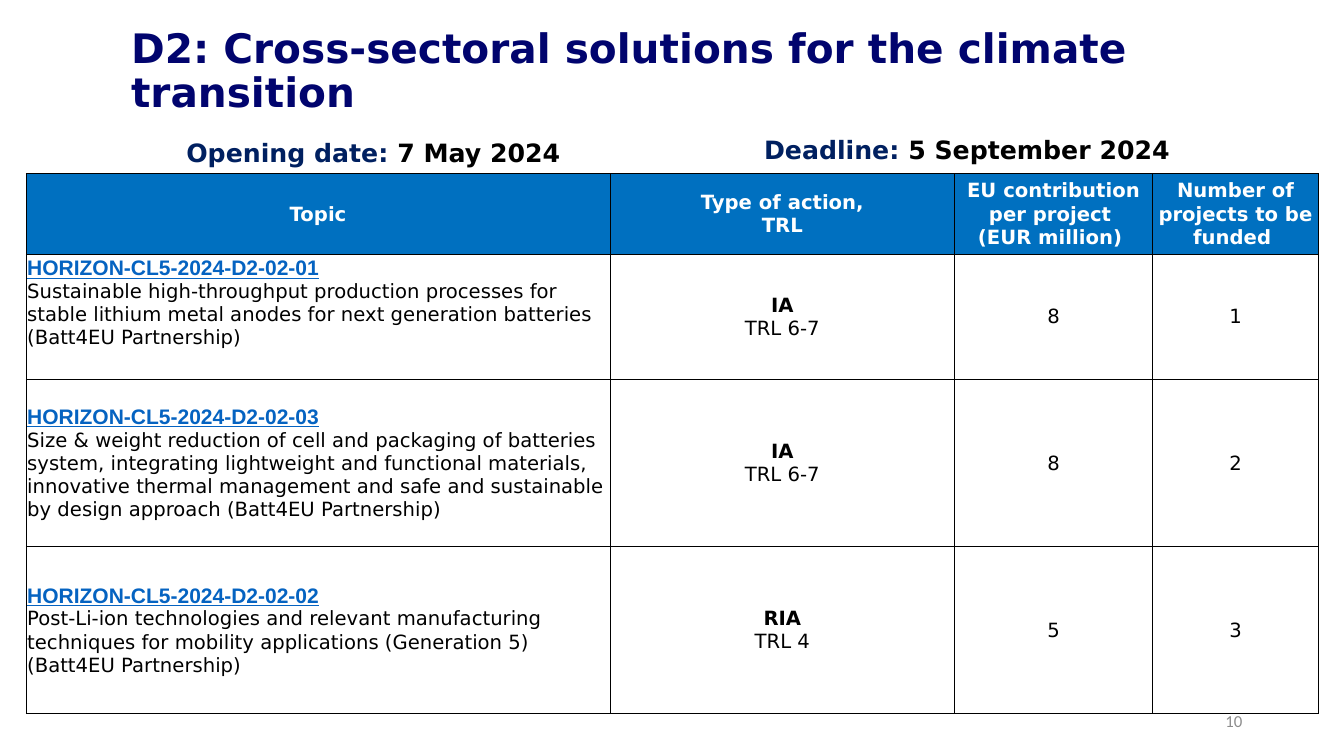
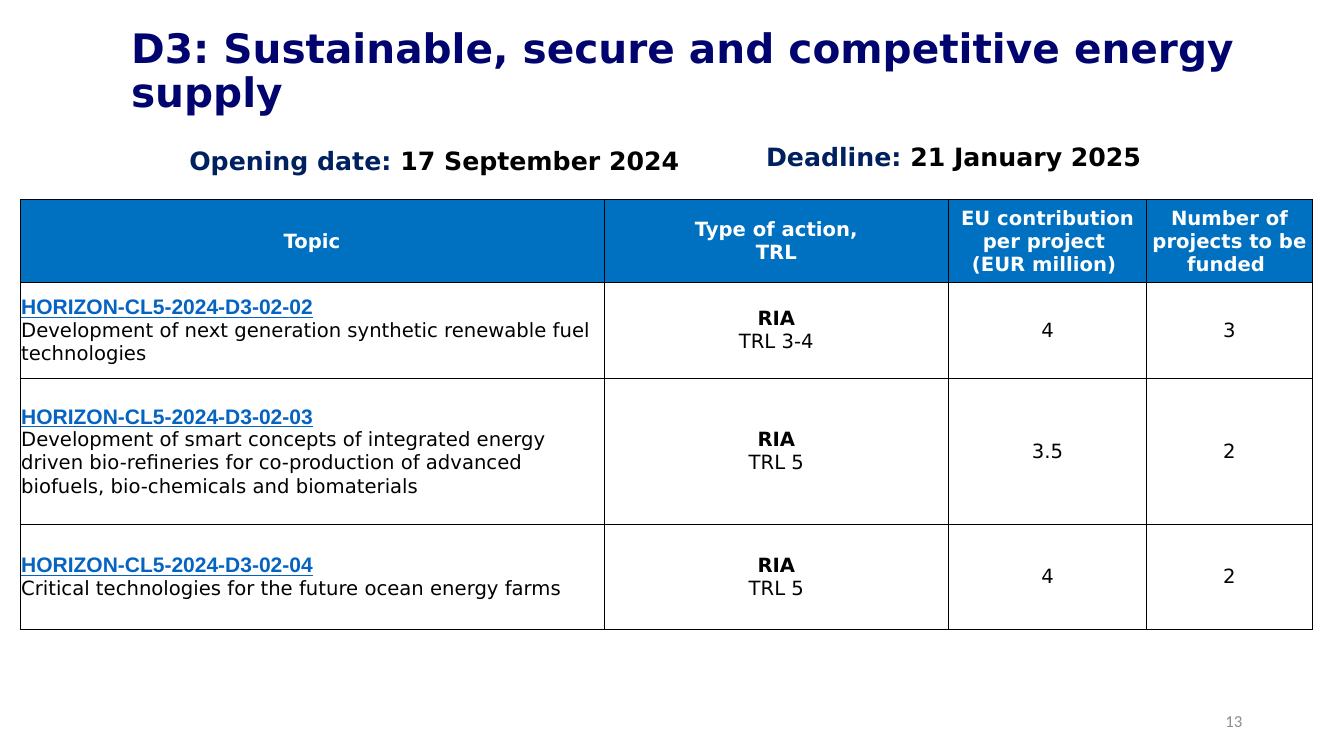
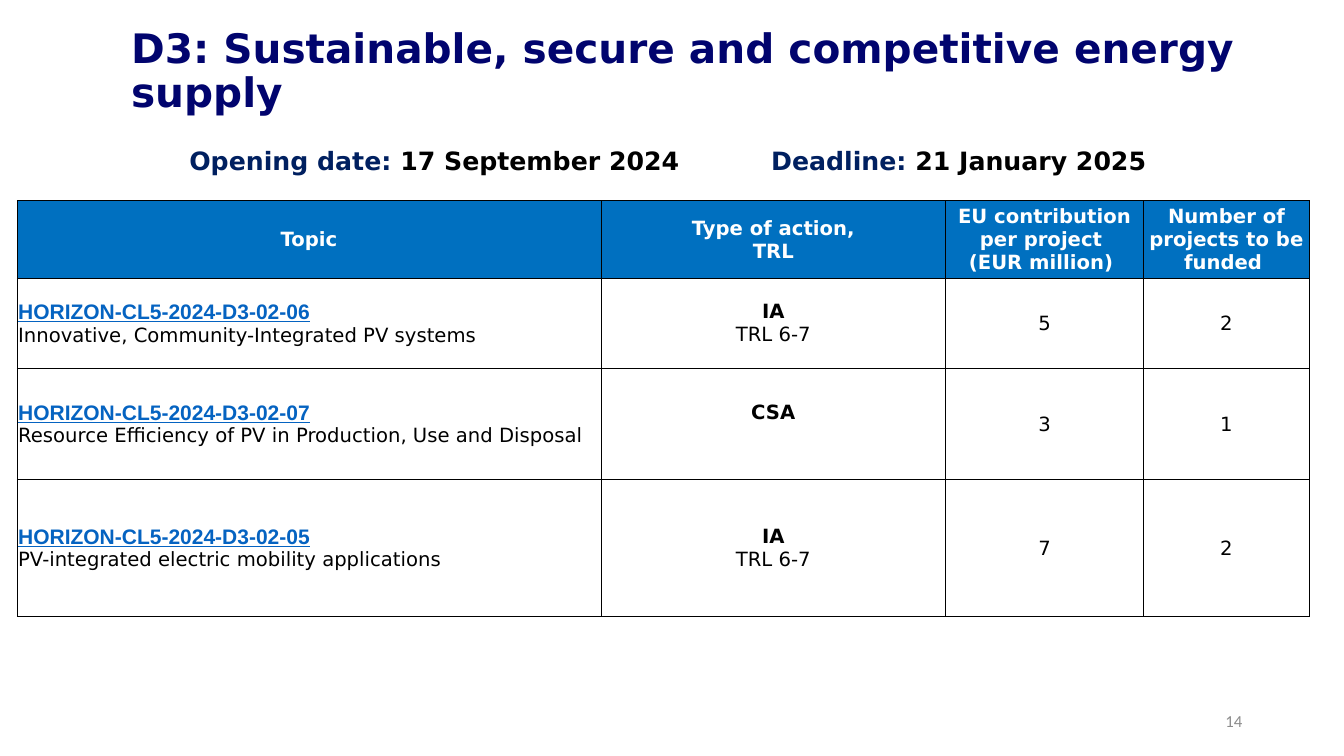
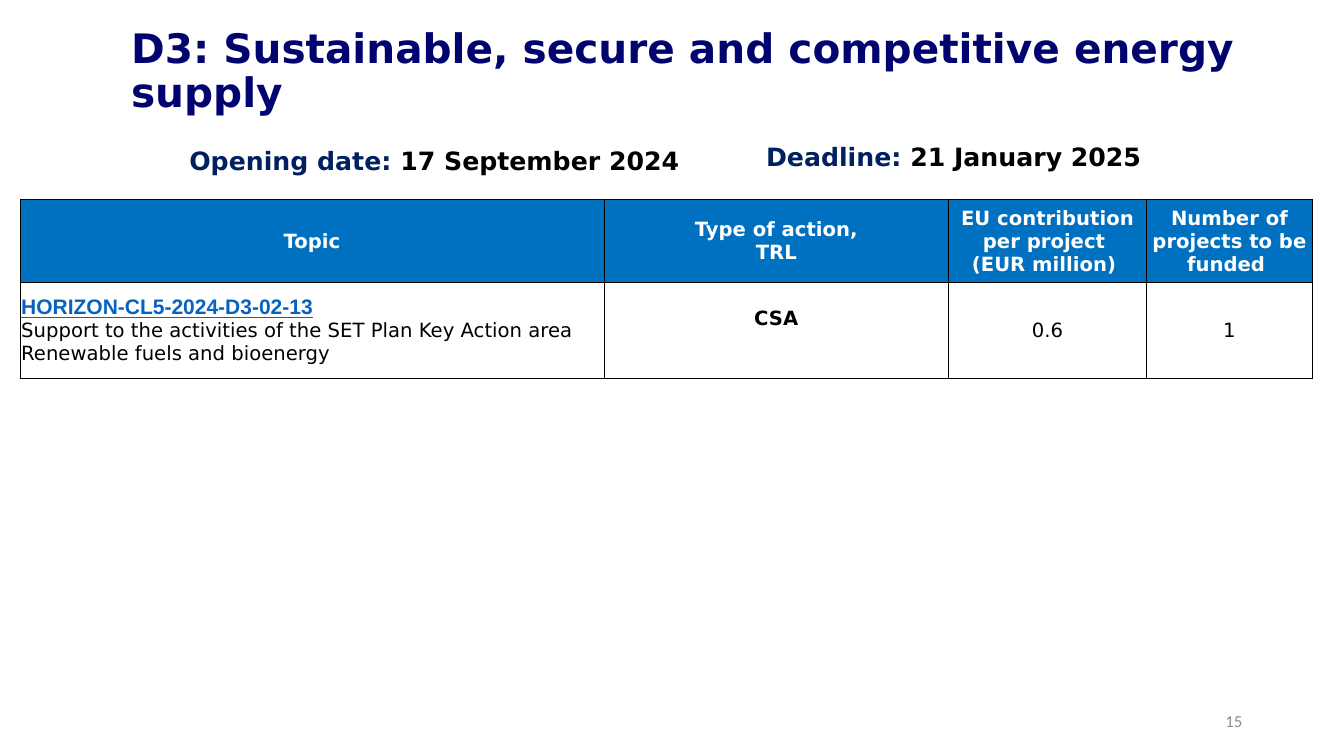
from dataclasses import dataclass

from lxml import etree
from pptx import Presentation
from pptx.dml.color import RGBColor
from pptx.enum.text import MSO_ANCHOR, MSO_AUTO_SIZE, PP_ALIGN
from pptx.oxml.ns import qn
from pptx.util import Inches, Pt

LEFT, CENTER, RIGHT = PP_ALIGN.LEFT, PP_ALIGN.CENTER, PP_ALIGN.RIGHT
MIDDLE = MSO_ANCHOR.MIDDLE
NO_AUTOFIT = MSO_AUTO_SIZE.NONE
TITLE_ONLY = 5


@dataclass(frozen=True)
class Style:
    size: float
    color: str
    bold: bool = False
    font: str = "DejaVu Sans"
    underline: bool = False


class Theme:
    header_fill = "0070C0"
    body_fill = "FFFFFF"
    border = "000000"
    border_width = Pt(0.5)
    title = Style(29, "01046E", bold=True)
    date_label = Style(18, "002060", bold=True)
    date = Style(18, "000000", bold=True)
    header = Style(14, "FFFFFF", bold=True)
    topic_code = Style(15, "0563C1", bold=True, font="Arial", underline=True)
    action = Style(14, "000000", bold=True)
    body = Style(14, "000000")
    page = Style(12, "8C8C8C", font="Calibri")


# Content
HEADERS = [
    ["Topic"],
    ["Type of action,", "TRL"],
    ["EU contribution per project ", "(EUR million) "],
    ["Number of projects to be funded "],
]
COLUMN_WIDTHS = [5.79, 3.42, 1.96, 1.65]
D2_TITLE = "D2: Cross-sectoral solutions for the climate transition "
D3_TITLE = "D3: Sustainable, secure and competitive energy supply "
D3_DATES = {"opening": "17 September 2024 ", "deadline": "21 January 2025"}

# Topic rows: code, description, action type, TRL, EU contribution, projects, row height
# "raise" lifts the text of single cells, keyed by (row, column)
CALLS = [
    {
        "page": "10", "title": D2_TITLE,
        "opening": "7 May 2024 ", "deadline": "5 September 2024",
        "opening_at": (1.75, 1.31), "deadline_at": (7.48, 1.28),
        "table_at": (0.26, 1.72), "header_height": 0.8,
        "raise": {(1, 0): 0.28},
        "topics": [
            ("HORIZON-CL5-2024-D2-02-01",
             "Sustainable high-throughput production processes for stable lithium metal "
             "anodes for next generation batteries (Batt4EU Partnership)",
             "IA", "TRL 6-7", "8", "1", 1.22),
            ("HORIZON-CL5-2024-D2-02-03",
             "Size & weight reduction of cell and packaging of batteries system, "
             "integrating lightweight and functional materials, innovative thermal "
             "management and safe and sustainable by design approach (Batt4EU Partnership)",
             "IA", "TRL 6-7", "8", "2", 1.66),
            ("HORIZON-CL5-2024-D2-02-02",
             "Post-Li-ion technologies and relevant manufacturing techniques for mobility "
             "applications (Generation 5) (Batt4EU Partnership)",
             "RIA", "TRL 4", "5", "3", 1.66),
        ],
    },
    {
        "page": "13", "title": D3_TITLE, **D3_DATES,
        "opening_at": (1.78, 1.39), "deadline_at": (7.5, 1.35),
        "table_at": (0.2, 1.98), "header_height": 0.82,
        "raise": {},
        "topics": [
            ("HORIZON-CL5-2024-D3-02-02",
             "Development of next generation synthetic renewable fuel technologies",
             "RIA", "TRL 3-4", "4", "3", 0.95),
            ("HORIZON-CL5-2024-D3-02-03",
             "Development of smart concepts of integrated energy driven bio-refineries "
             "for co-production of advanced biofuels, bio-chemicals and biomaterials",
             "RIA", "TRL 5", "3.5", "2", 1.45),
            ("HORIZON-CL5-2024-D3-02-04",
             "Critical technologies for the future ocean energy farms",
             "RIA", "TRL 5", "4", "2", 1.04),
        ],
    },
    {
        "page": "14", "title": D3_TITLE, **D3_DATES,
        "opening_at": (1.78, 1.39), "deadline_at": (7.55, 1.39),
        "table_at": (0.17, 1.99), "header_height": 0.77,
        "raise": {(2, 1): 0.23},
        "topics": [
            ("HORIZON-CL5-2024-D3-02-06",
             "Innovative, Community-Integrated PV systems",
             "IA", "TRL 6-7", "5", "2", 0.89),
            ("HORIZON-CL5-2024-D3-02-07",
             "Resource Efficiency of PV in Production, Use and Disposal",
             "CSA", None, "3", "1", 1.11),
            ("HORIZON-CL5-2024-D3-02-05",
             "PV-integrated electric mobility applications",
             "IA", "TRL 6-7", "7", "2", 1.35),
        ],
    },
    {
        "page": "15", "title": D3_TITLE, **D3_DATES,
        "opening_at": (1.78, 1.39), "deadline_at": (7.5, 1.35),
        "table_at": (0.2, 1.98), "header_height": 0.82,
        "raise": {(1, 1): 0.23},
        "topics": [
            ("HORIZON-CL5-2024-D3-02-13",
             "Support to the activities of the SET Plan Key Action area "
             "Renewable fuels and bioenergy",
             "CSA", None, "0.6", "1", 0.95),
        ],
    },
]


# Text helpers
def apply_style(font, style):
    font.name = style.font
    font.size = Pt(style.size)
    font.bold = style.bold
    font.underline = style.underline
    font.color.rgb = RGBColor.from_string(style.color)


def write_lines(frame, lines, align):
    """Write (text, style) pairs, one paragraph each."""
    for index, (text, style) in enumerate(lines):
        paragraph = frame.add_paragraph() if index else frame.paragraphs[0]
        paragraph.text = text
        paragraph.alignment = align
        apply_style(paragraph.font, style)


def add_text_frame(slide, left, top, width, height):
    box = slide.shapes.add_textbox(*map(Inches, (left, top, width, height)))
    box.text_frame.word_wrap = True
    return box.text_frame


# Slide parts
def set_title(slide, text):
    title = slide.shapes.title
    title.left, title.top, title.width, title.height = map(Inches, (1.2, -0.01, 11.5, 1.45))
    frame = title.text_frame
    frame.word_wrap = True
    frame.auto_size = NO_AUTOFIT
    frame.vertical_anchor = MIDDLE
    write_lines(frame, [(text, Theme.title)], LEFT)
    frame.paragraphs[0].line_spacing = 0.9


def add_date(slide, label, date, position, width):
    paragraph = add_text_frame(slide, *position, width, 0.4).paragraphs[0]
    for text, style in ((label, Theme.date_label), (date, Theme.date)):
        run = paragraph.add_run()
        run.text = text
        apply_style(run.font, style)


def add_page_number(slide, number):
    frame = add_text_frame(slide, 9.42, 6.95, 3, 0.4)
    frame.vertical_anchor = MIDDLE
    write_lines(frame, [(number, Theme.page)], RIGHT)


def set_borders(cell):
    properties = cell._tc.get_or_add_tcPr()
    for position, side in enumerate(("a:lnL", "a:lnR", "a:lnT", "a:lnB")):
        line = etree.Element(qn(side), w=str(Theme.border_width))
        fill = etree.SubElement(line, qn("a:solidFill"))
        etree.SubElement(fill, qn("a:srgbClr"), val=Theme.border)
        properties.insert(position, line)


def fill_cell(cell, lines, align, fill, lift):
    cell.margin_left = cell.margin_top = cell.margin_right = Inches(0.01)
    cell.margin_bottom = Inches(lift)
    cell.vertical_anchor = MIDDLE
    cell.fill.solid()
    cell.fill.fore_color.rgb = RGBColor.from_string(fill)
    set_borders(cell)
    write_lines(cell.text_frame, lines, align)


def topic_cells(code, description, action, trl, contribution, projects):
    action_lines = [(action, Theme.action)]
    if trl:
        action_lines.append((trl, Theme.body))
    return [
        [(code, Theme.topic_code), (description, Theme.body)],
        action_lines,
        [(contribution, Theme.body)],
        [(projects, Theme.body)],
    ]


def add_topic_table(slide, call):
    rows = [[[(text, Theme.header) for text in header] for header in HEADERS]]
    rows += [topic_cells(*topic[:-1]) for topic in call["topics"]]
    heights = [call["header_height"]] + [topic[-1] for topic in call["topics"]]

    table = slide.shapes.add_table(
        len(rows), len(HEADERS), *map(Inches, call["table_at"]),
        Inches(sum(COLUMN_WIDTHS)), Inches(sum(heights))).table
    table.first_row = table.horz_banding = False
    for column, width in zip(table.columns, COLUMN_WIDTHS):
        column.width = Inches(width)
    for row_index, (cells, height) in enumerate(zip(rows, heights)):
        table.rows[row_index].height = Inches(height)
        fill = Theme.body_fill if row_index else Theme.header_fill
        for column_index, lines in enumerate(cells):
            align = LEFT if row_index and column_index == 0 else CENTER
            lift = call["raise"].get((row_index, column_index), 0)
            fill_cell(table.cell(row_index, column_index), lines, align, fill, lift)


def main():
    deck = Presentation()
    deck.slide_width, deck.slide_height = Inches(13.33), Inches(7.5)
    for call in CALLS:
        slide = deck.slides.add_slide(deck.slide_layouts[TITLE_ONLY])
        set_title(slide, call["title"])
        add_page_number(slide, call["page"])
        add_topic_table(slide, call)
        add_date(slide, "Deadline: ", call["deadline"], call["deadline_at"], 4.8)
        add_date(slide, "Opening date: ", call["opening"], call["opening_at"], 6.64)
    deck.save("out.pptx")


if __name__ == "__main__":
    main()
